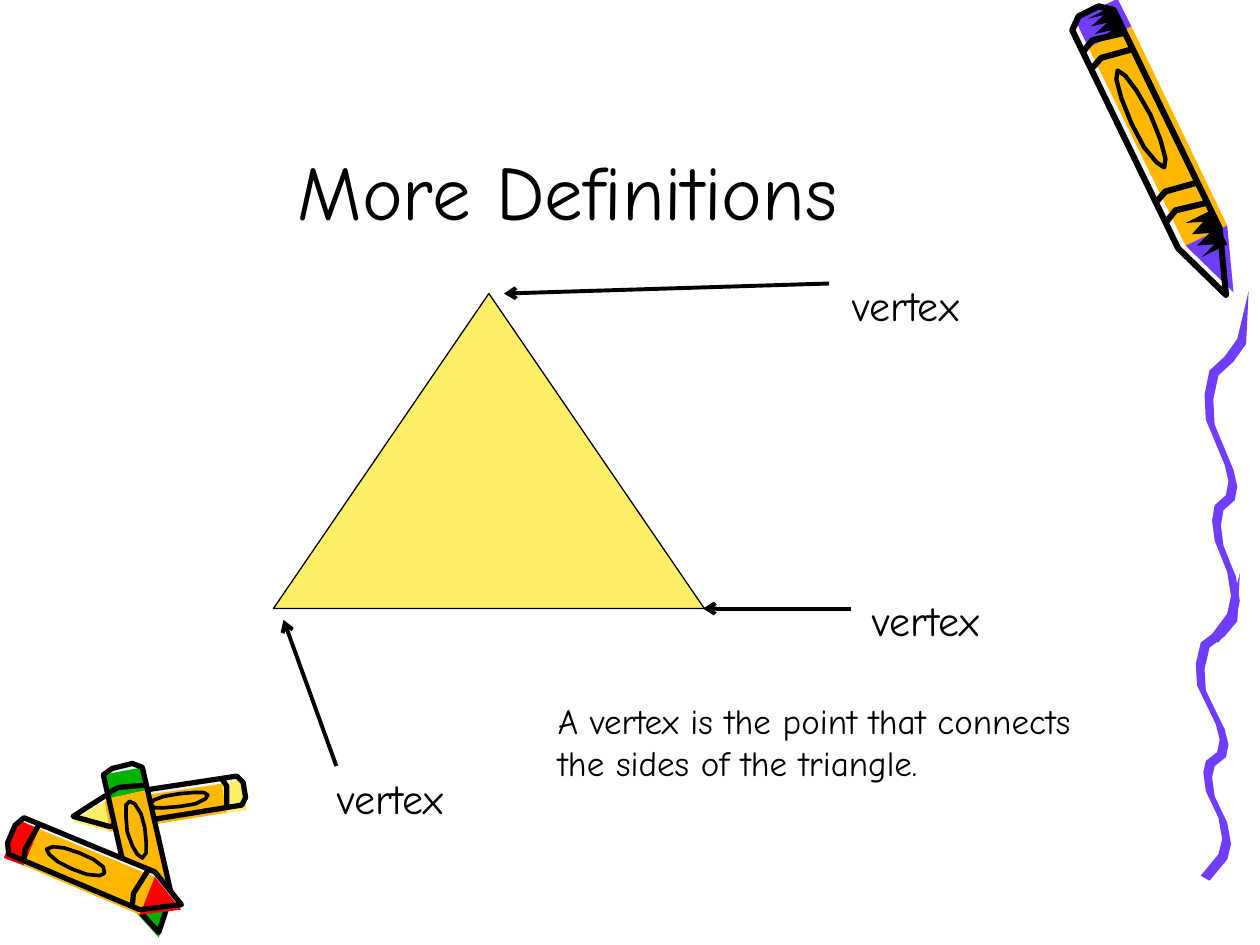
from dataclasses import dataclass
from math import cos, hypot, pi, sin

from pptx import Presentation
from pptx.dml.color import RGBColor
from pptx.enum.shapes import MSO_CONNECTOR, MSO_SHAPE
from pptx.enum.text import MSO_ANCHOR, PP_ALIGN
from pptx.oxml.ns import qn
from pptx.util import Pt
from lxml import etree

PX = 9144  # EMU per px, 100 px to the inch
WIDTH, HEIGHT = 1000, 750
FONT = "Comic Neue"
STRAIGHT = MSO_CONNECTOR.STRAIGHT
TRIANGLE = MSO_SHAPE.ISOSCELES_TRIANGLE
TOP, BOTTOM = MSO_ANCHOR.TOP, MSO_ANCHOR.BOTTOM
LEFT, CENTER = PP_ALIGN.LEFT, PP_ALIGN.CENTER

BLACK = RGBColor(0x00, 0x00, 0x00)
PURPLE = RGBColor(0x70, 0x3D, 0xFF)
ORANGE = RGBColor(0xFF, 0xB8, 0x00)
YELLOW = RGBColor(0xFF, 0xEF, 0x66)
RED = RGBColor(0xFF, 0x00, 0x00)
GREEN = RGBColor(0x00, 0xB2, 0x00)
PALE = RGBColor(0xF8, 0xF8, 0xF8)

# Crayon parts: (share of the length from the blunt end, share of the width from the axis).
SHOULDER = 0.8  # where the barrel ends and the cone begins
CONE = [(SHOULDER, -0.5), (1, 0), (SHOULDER, 0.5)]
BODY = [(0.03, 0.5), (0, 0.25), (0, -0.25), (0.03, -0.5)] + CONE

# Left edge of the squiggle from its foot up: (px from the left, percent of the height).
SQUIGGLE_EDGE = [(4, 100), (18, 93), (21, 88), (18, 81), (8, 72), (6, 66), (8, 62), (17, 59),
                 (19, 55), (16, 50), (1, 37), (0, 30), (4, 23), (16, 19), (26, 14), (35, 0)]
PEN_X, PEN_Y = 7, 4  # the slanted nib that gives the squiggle its thickness


@dataclass
class Crayon:
    color: RGBColor
    end: tuple
    tip: tuple
    width: int
    cap: float  # share of the length that the coloured cap takes
    bands: tuple
    shift: tuple = (0, 4)  # px between the ink and the colour printed under it
    ink_width: float = 3
    teeth: tuple = ()  # spans of jagged shading

    def place(self, part, shift=(0, 0)):
        """Turn a part's shares into slide px along this crayon's axis."""
        dx, dy = self.tip[0] - self.end[0], self.tip[1] - self.end[1]
        length = hypot(dx, dy)
        across_x, across_y = dy / length * self.width, -dx / length * self.width
        return [(round(self.end[0] + u * dx + v * across_x + shift[0]),
                 round(self.end[1] + u * dy + v * across_y + shift[1])) for u, v in part]


CRAYONS = [
    Crayon(YELLOW, (194, 627), (58, 648), 24, 0.12, (0.12,)),
    Crayon(GREEN, (97, 608), (126, 740), 32, 0.14, (0.14,)),
    Crayon(RED, (9, 662), (144, 718), 32, 0.12, (0.12, 0.76)),
    Crayon(PURPLE, (864, 9), (973, 234), 37, 0.1, (0.11, 0.17, 0.64, 0.71),
           (6, -2), 3.5, ((0.02, 0.1), (0.74, 0.86))),
]


def slab(start, stop):
    """Part of the barrel between two shares of the length."""
    return [(start, -0.5), (start, 0.5), (stop, 0.5), (stop, -0.5)]


def oval(center=0.38, half_length=0.17, half_width=0.22, corners=12):
    angles = [2 * pi * i / corners for i in range(corners)]
    return [(center + half_length * cos(a), half_width * sin(a)) for a in angles]


def jagged(start, stop, count=6):
    """Shading along one side of the barrel, its inner edge alternating in depth."""
    step = (stop - start) / count
    inner = [(start + i * step, 0.25 if i % 2 else -0.1) for i in range(count + 1)]
    return [(start, 0.5)] + inner + [(stop, 0.5)]


class Canvas:
    def __init__(self, slide, font=FONT, ink=BLACK):
        self.s, self.font, self.ink = slide, font, ink

    def style(self, sp, fill=None, line_width=None):
        sp.shadow.inherit = False
        if fill is None:
            sp.fill.background()
        else:
            sp.fill.solid()
            sp.fill.fore_color.rgb = fill
        if line_width is None:
            sp.line.fill.background()
        else:
            sp.line.color.rgb = self.ink
            sp.line.width = Pt(line_width)

    def outline(self, points, fill=None, line_width=None, close=True):
        builder = self.s.shapes.build_freeform(*points[0], scale=PX)
        builder.add_line_segments(points[1:], close=close)
        self.style(builder.convert_to_shape(), fill, line_width)

    def crayon(self, c):
        self.outline(c.place(BODY), PALE)
        colored = [(slab(0, c.cap), c.color), (slab(c.cap, SHOULDER), ORANGE), (CONE, c.color)]
        for part, fill in colored:
            self.outline(c.place(part, c.shift), fill)
        for span in c.teeth:
            self.outline(c.place(jagged(*span)), self.ink)
        self.outline(c.place(BODY), line_width=c.ink_width)
        self.outline(c.place(oval()), line_width=c.ink_width * 0.7)
        for u in c.bands:
            arch = [(u, -0.5), (u - 0.02, -0.2), (u, 0.5)]
            self.outline(c.place(arch), line_width=c.ink_width, close=False)

    def squiggle(self, x, y, h):
        edge = [(x + dx, y + round(h * percent / 100)) for dx, percent in SQUIGGLE_EDGE]
        far_edge = [(px + PEN_X, py + PEN_Y) for px, py in edge[:-1]]
        self.outline(edge + far_edge[::-1], PURPLE)

    def triangle(self, x, y, w, h, fill):
        sp = self.s.shapes.add_shape(TRIANGLE, x * PX, y * PX, w * PX, h * PX)
        self.style(sp, fill, 0.75)

    def arrow(self, x1, y1, x2, y2):
        c = self.s.shapes.add_connector(STRAIGHT, x1 * PX, y1 * PX, x2 * PX, y2 * PX)
        c.line.color.rgb = self.ink
        c.line.width = Pt(2.25)
        props = c.element.spPr
        etree.SubElement(props.find(qn("a:ln")), qn("a:tailEnd"), type="arrow")
        etree.SubElement(props, qn("a:effectLst"))

    def text(self, x, y, w, h, words, size, align=LEFT, anchor=TOP):
        tf = self.s.shapes.add_textbox(x * PX, y * PX, w * PX, h * PX).text_frame
        tf.word_wrap = True
        tf.vertical_anchor = anchor
        p = tf.paragraphs[0]
        p.alignment = align
        r = p.add_run()
        r.text = words
        r.font.name = self.font
        r.font.size = Pt(size)
        r.font.color.rgb = self.ink


def main():
    prs = Presentation()
    prs.slide_width, prs.slide_height = WIDTH * PX, HEIGHT * PX
    canvas = Canvas(prs.slides.add_slide(prs.slide_layouts[6]))

    for crayon in CRAYONS:
        canvas.crayon(crayon)
    canvas.squiggle(949, 455, 240)
    canvas.squiggle(956, 231, 275)

    canvas.text(75, 17, 751, 175, "More Definitions", 44, CENTER, BOTTOM)
    canvas.triangle(217, 233, 342, 250, YELLOW)
    vertices = [
        ((658, 225, 400, 233), (667, 217)),
        ((675, 483, 558, 483), (683, 467)),
        ((267, 608, 225, 492), (258, 608)),
    ]
    for ends, (x, y) in vertices:
        canvas.arrow(*ends)
        canvas.text(x, y, 150, 50, "vertex", 24)
    canvas.text(433, 550, 442, 110,
                "A vertex is the point that connects the sides of the triangle.", 20)

    prs.save("out.pptx")


if __name__ == "__main__":
    main()
